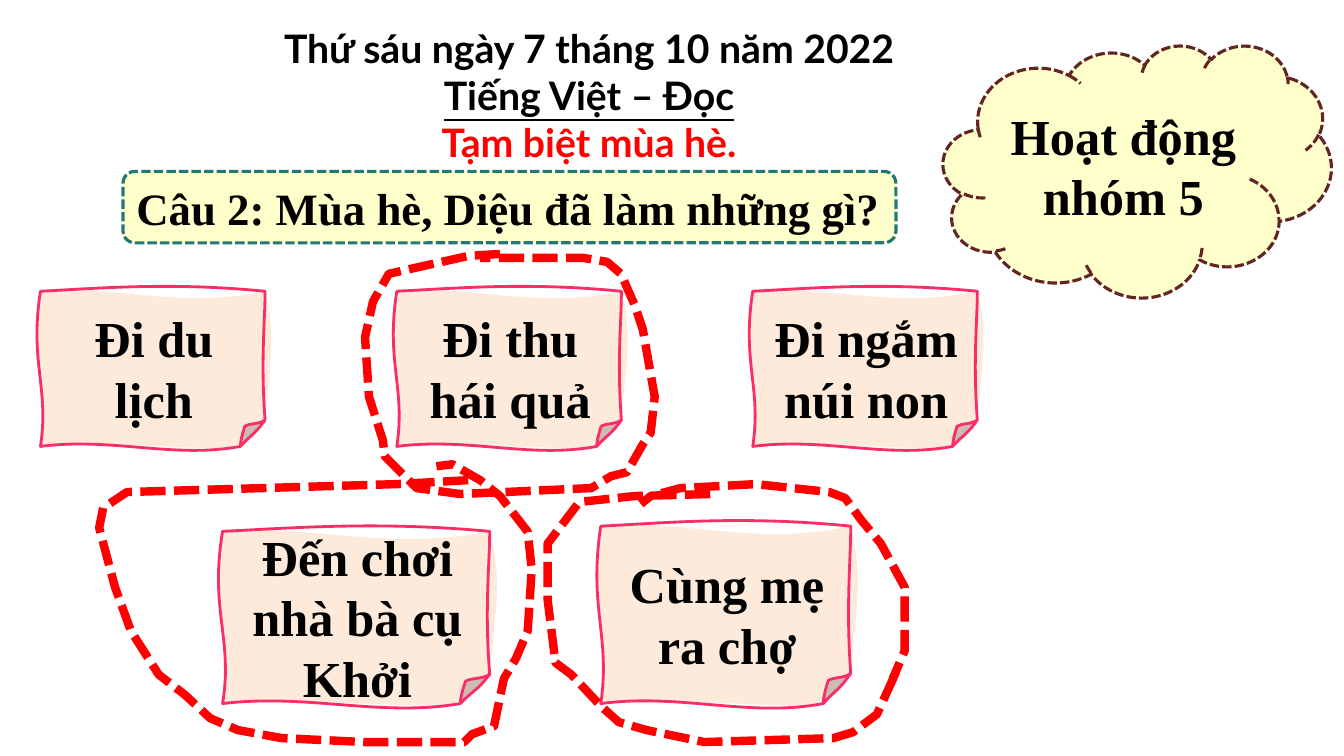
from typing import NamedTuple, Optional

from lxml import etree
from pptx import Presentation, util as u
from pptx.dml.color import RGBColor
from pptx.enum import dml, shapes, text
from pptx.oxml import ns

BLACK = RGBColor(0x00, 0x00, 0x00)
RED = RGBColor(0xFF, 0x00, 0x00)
CREAM = RGBColor(0xFF, 0xFF, 0xCC)
TEAL = RGBColor(0x21, 0x78, 0x75)
BROWN = RGBColor(0x63, 0x25, 0x23)
PEACH = RGBColor(0xFD, 0xEA, 0xDA)
SHADE = RGBColor(0xCB, 0xBC, 0xAF)
PINK = RGBColor(0xF9, 0x2D, 0x67)
SERIF = "Times New Roman"
SANS = "Lato"

Point = tuple[float, float]


class Pen(NamedTuple):
    color: RGBColor
    width: float
    dashed: bool = True


class Note(NamedTuple):
    words: str
    left: float
    top: float
    width: float
    height: float


class Panel(NamedTuple):
    words: str
    kind: shapes.MSO_SHAPE
    box: tuple[float, float, float, float]
    pen: Pen
    size: int
    align: text.PP_ALIGN


NOTES = [
    Note("Đi du lịch", 1.02, 7.34, 5.66, 3.91),
    Note("Đi thu hái quả", 10.0, 7.34, 5.66, 3.91),
    Note("Đi ngắm núi non", 18.97, 7.34, 5.66, 3.91),
    Note("Đến chơi nhà bà cụ Khởi", 5.61, 13.39, 6.73, 4.34),
    Note("Cùng mẹ ra chợ", 15.14, 13.26, 6.3, 4.47),
]

PANELS = [
    Panel("Câu 2: Mùa hè, Diệu đã làm những gì?", shapes.MSO_SHAPE.ROUNDED_RECTANGLE,
          (3.1, 4.32, 19.48, 1.8), Pen(TEAL, 2.25), 32, text.PP_ALIGN.LEFT),
    Panel("Hoạt động nhóm 5", shapes.MSO_SHAPE.CLOUD,
          (23.77, 1.14, 9.78, 6.35), Pen(BROWN, 2.25), 36, text.PP_ALIGN.CENTER),
]

# Outlines of a note, as shares of its width and height; body and edge are Bezier chains
BODY = [(0, 0), (.28, -.05), (.63, .12), (1, 0), (1.05, .28), (1.02, .47), (1, .83),
        (.98, .85), (.94, .93), (.89, 1), (.78, 1.04), (.2, .95), (0, 1),
        (.03, .84), (-.04, .17), (0, 0)]
FOLD = [(.89, 1), (.91, .87), (1, .83)]
EDGE = [(.89, 1), (.89, .97), (.9, .91), (.91, .87), (.93, .85), (.97, .86), (1, .83),
        (.95, .93), (.94, .92), (.89, 1), (.59, 1.08), (.32, .94), (0, 1),
        (.04, .62), (-.05, .46), (0, 0), (.27, -.02), (.58, -.06), (1, 0),
        (1, .19), (.98, .45), (1, .83)]

# Hand-drawn rings around the right answers, in centimetres
RINGS = [
    [(12.6, 6.4), (11.8, 6.45), (9.8, 6.9), (9.4, 7.6), (9.2, 8.5), (9.3, 10),
     (9.65, 11.1), (9.7, 11.5), (10.5, 12.3), (11.6, 12.45), (14.9, 12.3),
     (15.4, 12), (15.8, 11.9), (16.2, 11.2), (16.4, 10.9), (16.5, 10), (16.2, 8.3),
     (16, 7.7), (15.65, 6.9), (15.3, 6.6), (14.7, 6.5), (12.1, 6.5)],
    [(11.8, 12.1), (10, 12.2), (3.2, 12.4), (2.6, 12.8), (2.5, 13.3), (2.9, 14.8),
     (3.3, 15.9), (4, 17), (4.65, 17.5), (5.3, 18.1), (6, 18.4), (7.1, 18.6),
     (9.2, 18.7), (11.7, 18.7), (11.9, 18.5), (12.45, 18.3), (12.7, 17.1),
     (13, 16.6), (13.3, 15.9), (13.4, 14.35), (13.3, 13.4), (12.6, 12.5),
     (12.1, 12.1), (11.4, 11.7), (11, 11.75)],
    [(17.9, 12.45), (16, 12.5), (14.6, 12.65), (13.8, 13.7), (13.8, 15.1),
     (14, 16.7), (14.4, 17), (15.15, 17.8), (15.6, 18.2), (16.3, 18.4),
     (17.75, 18.7), (21, 18.6), (21.5, 18.45), (22.1, 18), (22.6, 16.9),
     (22.5, 17.1), (22.8, 16.4), (22.8, 14.8), (22.2, 13.7), (21.7, 13.1),
     (21.3, 12.55), (20.9, 12.4), (19.05, 12.2), (17.15, 12.3), (16.4, 12.5),
     (16.15, 12.7)],
]


def paint(shape, fill: Optional[RGBColor], pen: Optional[Pen]) -> None:
    shape.shadow.inherit = False
    if fill is None:
        shape.fill.background()
    else:
        shape.fill.solid()
        shape.fill.fore_color.rgb = fill
    if pen is None:
        shape.line.fill.background()
        return
    shape.line.color.rgb = pen.color
    shape.line.width = u.Pt(pen.width)
    if pen.dashed:
        shape.line.dash_style = dml.MSO_LINE.SQUARE_DOT


def style(para, font: str, size: int, color: RGBColor, align: text.PP_ALIGN) -> None:
    para.alignment = align
    for run in para.runs:
        run.font.name = font
        run.font.size = u.Pt(size)
        run.font.bold = True
        run.font.color.rgb = color


def write(shape, words: str, size: int, align: text.PP_ALIGN) -> None:
    frame = shape.text_frame
    frame.word_wrap = True
    frame.vertical_anchor = text.MSO_ANCHOR.MIDDLE
    frame.text = words
    style(frame.paragraphs[0], SERIF, size, BLACK, align)


def draw(slide, points: list[Point], fill: Optional[RGBColor], pen: Optional[Pen]):
    spots = [(u.Cm(x), u.Cm(y)) for x, y in points]
    pencil = slide.shapes.build_freeform(*spots[0])
    pencil.add_line_segments(spots[1:], close=pen is None)
    shape = pencil.convert_to_shape()
    paint(shape, fill, pen)
    return shape


def curve(shape) -> None:
    """Turn every three straight segments into one Bezier curve."""
    lines = list(shape.element.iter(ns.qn("a:lnTo")))
    for first in range(0, len(lines) - 2, 3):
        bend = etree.Element(ns.qn("a:cubicBezTo"))
        lines[first].addprevious(bend)
        for line in lines[first:first + 3]:
            bend.append(line[0])
            line.getparent().remove(line)


def add_note(slide, note: Note) -> None:
    def place(chain: list[Point]) -> list[Point]:
        return [(note.left + x * note.width, note.top + y * note.height)
                for x, y in chain]

    body = draw(slide, place(BODY), PEACH, None)
    curve(body)
    body.text_frame.margin_left = body.text_frame.margin_right = u.Cm(0.5)
    write(body, note.words, 36, text.PP_ALIGN.CENTER)
    draw(slide, place(FOLD), SHADE, None)
    curve(draw(slide, place(EDGE), None, Pen(PINK, 2, False)))


def add_panel(slide, panel: Panel) -> None:
    shape = slide.shapes.add_shape(panel.kind, *map(u.Cm, panel.box))
    paint(shape, CREAM, panel.pen)
    write(shape, panel.words, panel.size, panel.align)


def add_title(slide) -> None:
    box = slide.shapes.add_textbox(u.Cm(4.62), u.Cm(0.48), u.Cm(20.45), u.Cm(3.84))
    frame = box.text_frame
    frame.word_wrap = True
    frame.text = "Thứ sáu ngày 7 tháng 10 năm 2022\nTiếng Việt – Đọc\nTạm biệt mùa hè."
    for para, color in zip(frame.paragraphs, (BLACK, BLACK, RED)):
        style(para, SANS, 28, color, text.PP_ALIGN.CENTER)
    frame.paragraphs[1].runs[0].font.underline = True


def main() -> None:
    deck = Presentation()
    deck.slide_width, deck.slide_height = u.Cm(33.87), u.Cm(19.05)
    slide = deck.slides.add_slide(deck.slide_layouts[6])
    # Heading, question and group cloud
    add_title(slide)
    for panel in PANELS:
        add_panel(slide, panel)
    # Answer notes
    for note in NOTES:
        add_note(slide, note)
    # Rings on top
    for ring in RINGS:
        draw(slide, ring, None, Pen(RED, 6))
    deck.save("out.pptx")


if __name__ == "__main__":
    main()
